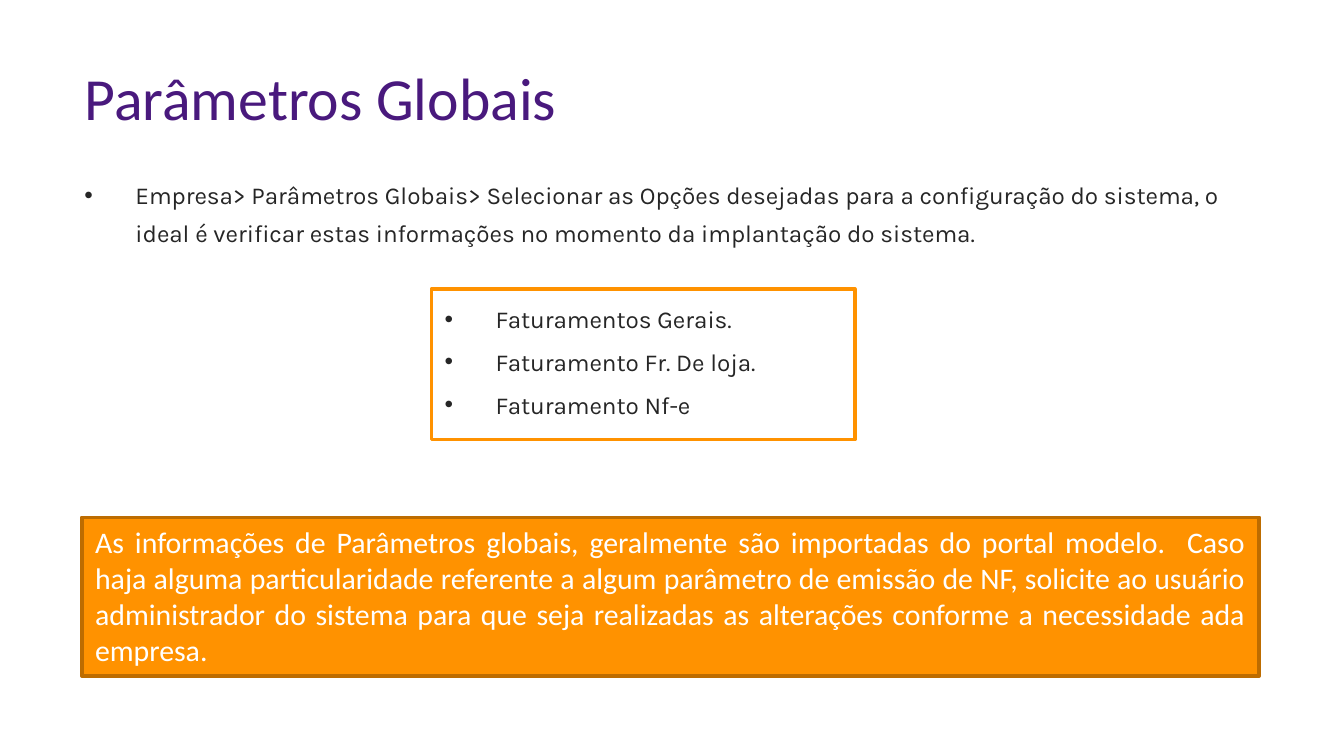
from pptx import Presentation
from pptx import util as u
from pptx.dml.color import RGBColor
from pptx.enum import shapes, text
from pptx.oxml import parse_xml
from pptx.oxml.ns import nsdecls

WIDTH = 10
HEIGHT = WIDTH * 9 / 16
ORANGE, BROWN, PURPLE, INK, WHITE = "FF9200", "BD6C00", "49197D", "262626", "FFFFFF"
INDENT = u.Inches(0.38)

TITLE = ["Parâmetros Globais"]
PATH_STEPS = [
    "Empresa> Parâmetros Globais> Selecionar as Opções desejadas para a configuração do sistema, "
    "o ideal é verificar estas informações no momento da implantação do sistema."
]
BILLING = ["Faturamentos Gerais.", "Faturamento Fr. De loja.", "Faturamento Nf-e"]
NOTICE = [
    "As informações de Parâmetros globais, geralmente são importadas do portal modelo.  "
    "Caso haja alguma particularidade referente a algum parâmetro de emissão de NF, solicite ao "
    "usuário administrador do sistema para que seja realizadas as alterações conforme a "
    "necessidade ada empresa."
]
BULLETED = dict(size=13, font="Karla", color=INK, bullet=True)


def rgb(value):
    return RGBColor.from_string(value)


def add_bullet(paragraph):
    props = paragraph._p.get_or_add_pPr()
    props.set("marL", str(INDENT))
    props.set("indent", str(-INDENT))
    props.append(parse_xml(f'<a:buFont {nsdecls("a")} typeface="Arial"/>'))
    props.append(parse_xml(f'<a:buChar {nsdecls("a")} char="•"/>'))


def write(holder, lines, size, font, color, bullet=False, align=text.PP_ALIGN.LEFT):
    frame = holder.text_frame
    frame.word_wrap = True
    frame.vertical_anchor = text.MSO_ANCHOR.TOP
    for i, line in enumerate(lines):
        paragraph = frame.paragraphs[0] if i == 0 else frame.add_paragraph()
        paragraph.alignment = align
        if bullet:
            add_bullet(paragraph)
            paragraph.line_spacing = 1.3
            if i:
                paragraph.space_before = u.Pt(size * 0.2)
        run = paragraph.add_run()
        run.text = line
        run.font.size = u.Pt(size)
        run.font.name = font
        run.font.color.rgb = rgb(color)


def panel(slide, area, fill, border):
    box = slide.shapes.add_shape(shapes.MSO_SHAPE.RECTANGLE, *map(u.Inches, area))
    box.shadow.inherit = False
    box.fill.solid()
    box.fill.fore_color.rgb = rgb(fill)
    box.line.color.rgb = rgb(border)
    box.line.width = u.Pt(2)
    return box


def label(slide, area):
    return slide.shapes.add_textbox(*map(u.Inches, area))


deck = Presentation()
deck.slide_width, deck.slide_height = u.Inches(WIDTH), u.Inches(HEIGHT)
slide = deck.slides.add_slide(deck.slide_layouts[6])

notice = panel(slide, (0.61, 3.85, 8.76, 1.18), ORANGE, BROWN)
write(notice, NOTICE, size=16, font="Calibri", color=WHITE, align=text.PP_ALIGN.JUSTIFY)

billing = panel(slide, (3.21, 2.15, 3.15, 1.12), WHITE, ORANGE)
write(billing, BILLING, **BULLETED)

title = label(slide, (0.53, 0.4, 5.82, 0.44))
write(title, TITLE, size=32, font="Calibri", color=PURPLE)

path_steps = label(slide, (0.53, 1.23, 9.07, 0.72))
write(path_steps, PATH_STEPS, **BULLETED)

deck.save("out.pptx")
